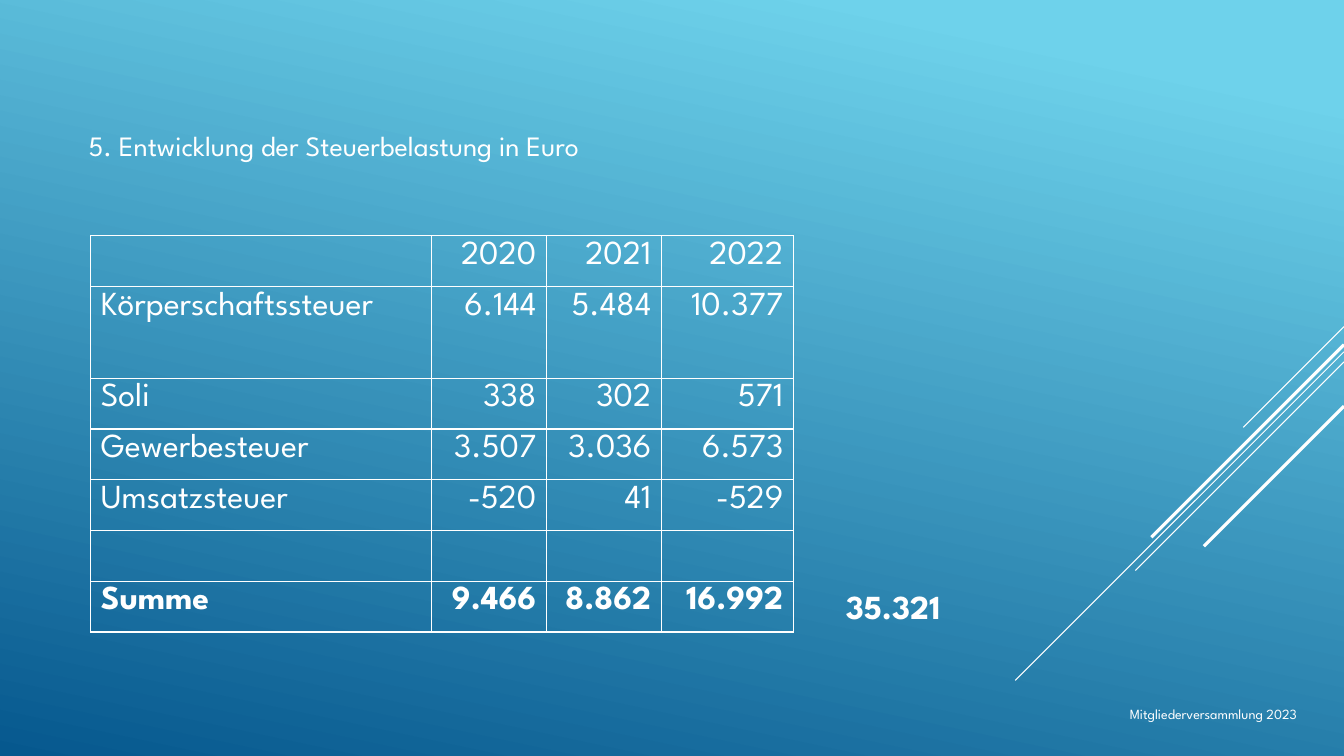
from dataclasses import dataclass

from lxml.etree import SubElement
from pptx import Presentation
from pptx.dml.color import RGBColor
from pptx.enum.shapes import MSO_CONNECTOR
from pptx.enum.text import PP_ALIGN
from pptx.oxml import parse_xml
from pptx.oxml.ns import nsdecls, qn
from pptx.slide import Slide
from pptx.table import _Cell
from pptx.text.text import _Paragraph
from pptx.util import Inches, Pt

WHITE = RGBColor(0xFF, 0xFF, 0xFF)
LIGHT_BLUE = RGBColor(0x6E, 0xD2, 0xEB)
DEEP_BLUE = RGBColor(0x06, 0x58, 0x8E)
FONT_NAME = "League Spartan"
SLIDE_WIDTH, SLIDE_HEIGHT = 13.33, 7.5

TABLE_LEFT, TABLE_TOP, TABLE_HEIGHT = 0.9, 2.34, 3.93
COLUMN_WIDTHS = (3.38, 1.14, 1.14, 1.31)
TALL_ROW, TALL_ROW_HEIGHT = 1, 0.91
TAX_ROWS = (
    ("", "2020", "2021", "2022"),
    ("Körperschaftssteuer", "6.144", "5.484", "10.377"),
    ("Soli", "338", "302", "571"),
    ("Gewerbesteuer", "3.507", "3.036", "6.573"),
    ("Umsatzsteuer", "-520", "41", "-529"),
    ("", "", "", ""),
    ("Summe", "9.466", "8.862", "16.992"),
)


@dataclass(frozen=True)
class Ray:
    """A 45 degree line falling to the left from the slide's right edge."""
    top: float
    length: float
    weight: float = 0.75


@dataclass(frozen=True)
class Label:
    text: str
    left: float
    top: float
    width: float
    height: float
    size: int
    bold: bool = False
    alignment: PP_ALIGN = PP_ALIGN.LEFT


RAYS = (
    Ray(3.24, 1.0),
    Ray(3.49, 3.26),
    Ray(3.59, 2.07),
    Ray(3.42, 1.91, 2.25),
    Ray(4.03, 1.39, 2.25),
)
LABELS = (
    Label("5. Entwicklung der Steuerbelastung in Euro", 0.78, 1.23, 7.5, 0.44, 20),
    Label("35.321", 8.29, 5.76, 1.31, 0.5, 24, bold=True),
    Label("Mitgliederversammlung 2023", 4.71, 6.95, 8.25, 0.4, 10,
          alignment=PP_ALIGN.RIGHT),
)


def format_paragraph(paragraph: _Paragraph, size: int, bold: bool,
                     alignment: PP_ALIGN) -> None:
    paragraph.alignment = alignment
    font_format = {"name": FONT_NAME, "size": Pt(size), "bold": bold}
    for target in (paragraph.font, *(run.font for run in paragraph.runs)):
        for attribute, value in font_format.items():
            setattr(target, attribute, value)
        target.color.rgb = WHITE


def paint_background(slide: Slide) -> None:
    fill = slide.background.fill
    fill.gradient()
    fill.gradient_angle = 360 - 102
    stops = ((0.1, LIGHT_BLUE), (1.0, DEEP_BLUE))
    for stop, (position, color) in zip(fill.gradient_stops, stops):
        stop.position = position
        stop.color.rgb = color


def add_ray(slide: Slide, ray: Ray) -> None:
    connector = slide.shapes.add_connector(
        MSO_CONNECTOR.STRAIGHT,
        Inches(SLIDE_WIDTH), Inches(ray.top),
        Inches(SLIDE_WIDTH - ray.length), Inches(ray.top + ray.length))
    connector.line.color.rgb = WHITE
    connector.line.width = Pt(ray.weight)
    SubElement(connector._element.spPr, qn("a:effectLst"))


def add_label(slide: Slide, label: Label) -> None:
    box = slide.shapes.add_textbox(Inches(label.left), Inches(label.top),
                                   Inches(label.width), Inches(label.height))
    box.text_frame.word_wrap = True
    paragraph = box.text_frame.paragraphs[0]
    paragraph.text = label.text
    format_paragraph(paragraph, label.size, label.bold, label.alignment)


def outline_cell(cell: _Cell) -> None:
    cell.fill.background()
    properties = cell._tc.get_or_add_tcPr()
    for index, side in enumerate(("lnL", "lnR", "lnT", "lnB")):
        properties.insert(index, parse_xml(
            f'<a:{side} {nsdecls("a")} w="{Pt(1)}"><a:solidFill>'
            f'<a:srgbClr val="{WHITE}"/></a:solidFill></a:{side}>'))


def add_tax_table(slide: Slide) -> None:
    row_count = len(TAX_ROWS)
    table = slide.shapes.add_table(
        row_count, len(COLUMN_WIDTHS), Inches(TABLE_LEFT), Inches(TABLE_TOP),
        Inches(sum(COLUMN_WIDTHS)), Inches(TABLE_HEIGHT)).table
    table.first_row = table.horz_banding = False
    for column, width in zip(table.columns, COLUMN_WIDTHS):
        column.width = Inches(width)
    row_height = (TABLE_HEIGHT - TALL_ROW_HEIGHT) / (row_count - 1)
    for row_index, values in enumerate(TAX_ROWS):
        is_tall = row_index == TALL_ROW
        table.rows[row_index].height = Inches(TALL_ROW_HEIGHT if is_tall else row_height)
        for column_index, value in enumerate(values):
            cell = table.cell(row_index, column_index)
            outline_cell(cell)
            paragraph = cell.text_frame.paragraphs[0]
            if value:
                paragraph.text = value
            format_paragraph(paragraph, 24, row_index == row_count - 1,
                             PP_ALIGN.RIGHT if column_index else PP_ALIGN.LEFT)


def main() -> None:
    presentation = Presentation()
    presentation.slide_width = Inches(SLIDE_WIDTH)
    presentation.slide_height = Inches(SLIDE_HEIGHT)
    slide = presentation.slides.add_slide(presentation.slide_layouts[6])
    paint_background(slide)
    for ray in RAYS:
        add_ray(slide, ray)
    add_tax_table(slide)
    for label in LABELS:
        add_label(slide, label)
    presentation.save("out.pptx")


if __name__ == "__main__":
    main()
